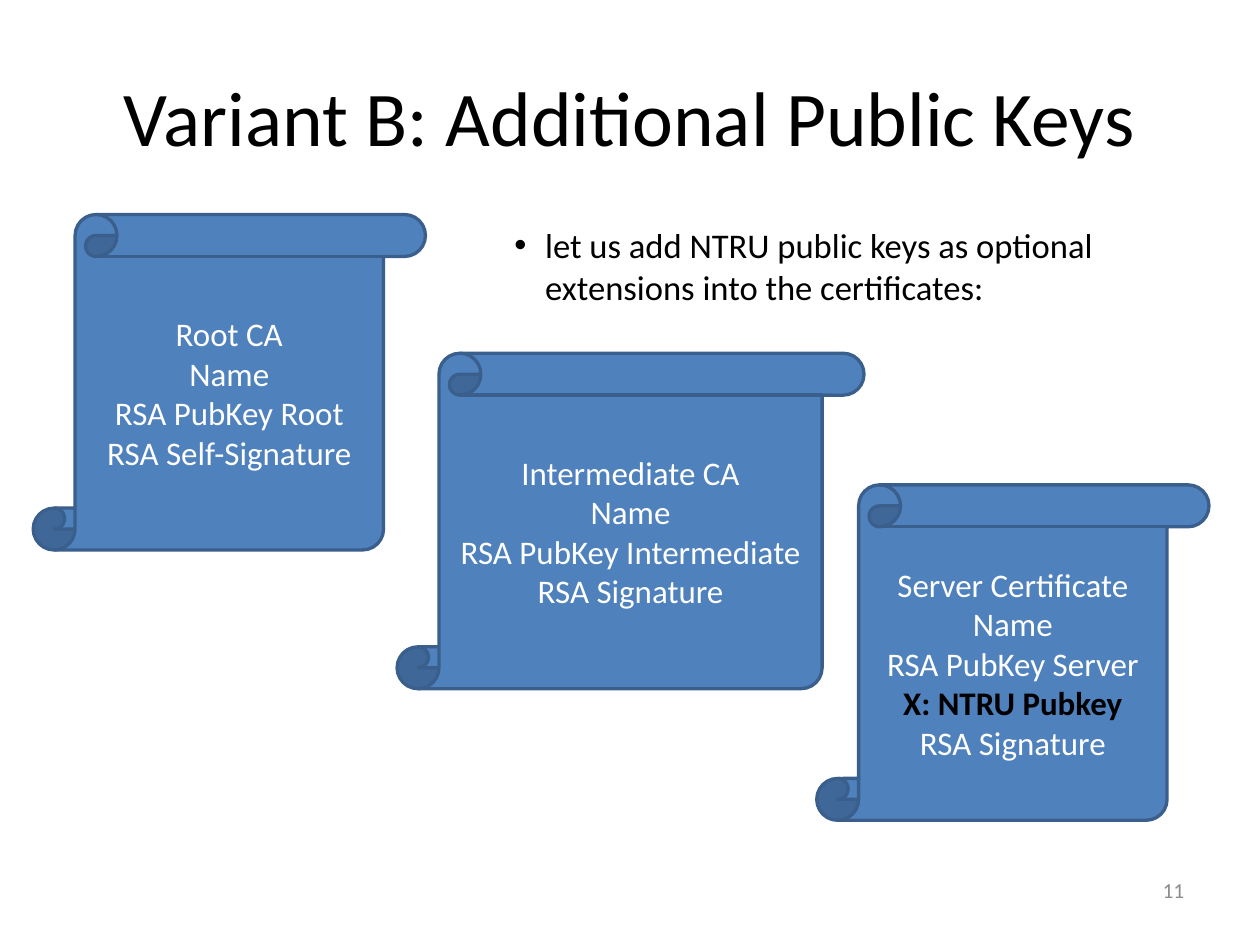
from lxml import etree
from pptx import Presentation
from pptx.dml.color import RGBColor
from pptx.enum import shapes, text
from pptx.oxml.ns import qn
from pptx.util import Inches, Pt

# Content
TITLE = "Variant B: Additional Public Keys"
BULLET = "let us add NTRU public keys as optional extensions into the certificates:"
PAGE = "11"
HIGHLIGHT = "X: NTRU Pubkey"
# Each certificate: left, top, width, lines
CERTIFICATES = [
    (0.28, 1.81, 3.31, ["Root CA", "Name", "RSA PubKey Root", "RSA Self-Signature"]),
    (3.35, 2.98, 3.94, ["Intermediate CA", "Name", "RSA PubKey Intermediate", "RSA Signature"]),
    (6.89, 4.09, 3.31, ["Server Certificate", "Name", "RSA PubKey Server", HIGHLIGHT,
                        "RSA Signature"]),
]
SCROLL_HEIGHT = 2.83
FONT = "Calibri"
COLORS = {"text": "000000", "page": "8C8C8C", "scroll": "4F81BD",
          "edge": "3A5F8C", "light": "FFFFFF"}
ALIGN = text.PP_ALIGN
ANCHOR = text.MSO_ANCHOR


def rgb(name):
    return RGBColor.from_string(COLORS[name])


def add_run(p, words, size, color, bold=False):
    r = p.add_run()
    r.text = words
    r.font.name = FONT
    r.font.size = Pt(size)
    r.font.bold = bold
    r.font.color.rgb = rgb(color)


def add_text(s, box, words, size, color, align, anchor):
    tf = s.shapes.add_textbox(*map(Inches, box)).text_frame
    tf.word_wrap = True
    tf.vertical_anchor = anchor
    tf.margin_left = tf.margin_right = Inches(0.11)
    tf.margin_top = tf.margin_bottom = Inches(0.05)
    p = tf.paragraphs[0]
    p.alignment = align
    add_run(p, words, size, color)
    return p


def add_bullet(p, left, hanging):
    pPr = p._p.get_or_add_pPr()
    pPr.set("marL", str(Inches(left)))
    pPr.set("indent", str(-Inches(hanging)))
    etree.SubElement(pPr, qn("a:buFont")).set("typeface", "Arial")
    etree.SubElement(pPr, qn("a:buChar")).set("char", "•")


def add_certificate(s, left, top, width, lines):
    sp = s.shapes.add_shape(shapes.MSO_SHAPE.VERTICAL_SCROLL, Inches(left), Inches(top),
                            Inches(width), Inches(SCROLL_HEIGHT))
    sp.shadow.inherit = False
    sp.fill.solid()
    sp.fill.fore_color.rgb = rgb("scroll")
    sp.line.color.rgb = rgb("edge")
    sp.line.width = Pt(2)
    tf = sp.text_frame
    tf.word_wrap = True
    tf.vertical_anchor = ANCHOR.MIDDLE
    for i, line in enumerate(lines):
        p = tf.add_paragraph() if i else tf.paragraphs[0]
        p.alignment = ALIGN.CENTER
        marked = line == HIGHLIGHT
        add_run(p, line, 20, "text" if marked else "light", marked)


def main():
    prs = Presentation()
    prs.slide_width, prs.slide_height = Inches(10.63), Inches(7.87)
    s = prs.slides.add_slide(prs.slide_layouts[6])

    # Title, bullet and page number
    add_text(s, (0.53, 0.32, 9.57, 1.31), TITLE, 47, "text", ALIGN.CENTER, ANCHOR.MIDDLE)
    p = add_text(s, (0.53, 1.84, 9.57, 5.19), BULLET, 21, "text", ALIGN.LEFT, ANCHOR.TOP)
    add_bullet(p, 3.96, 0.26)
    add_text(s, (7.62, 7.3, 2.48, 0.42), PAGE, 13, "page", ALIGN.RIGHT, ANCHOR.MIDDLE)

    # Certificate scrolls
    for certificate in CERTIFICATES:
        add_certificate(s, *certificate)

    prs.save("out.pptx")


if __name__ == "__main__":
    main()
